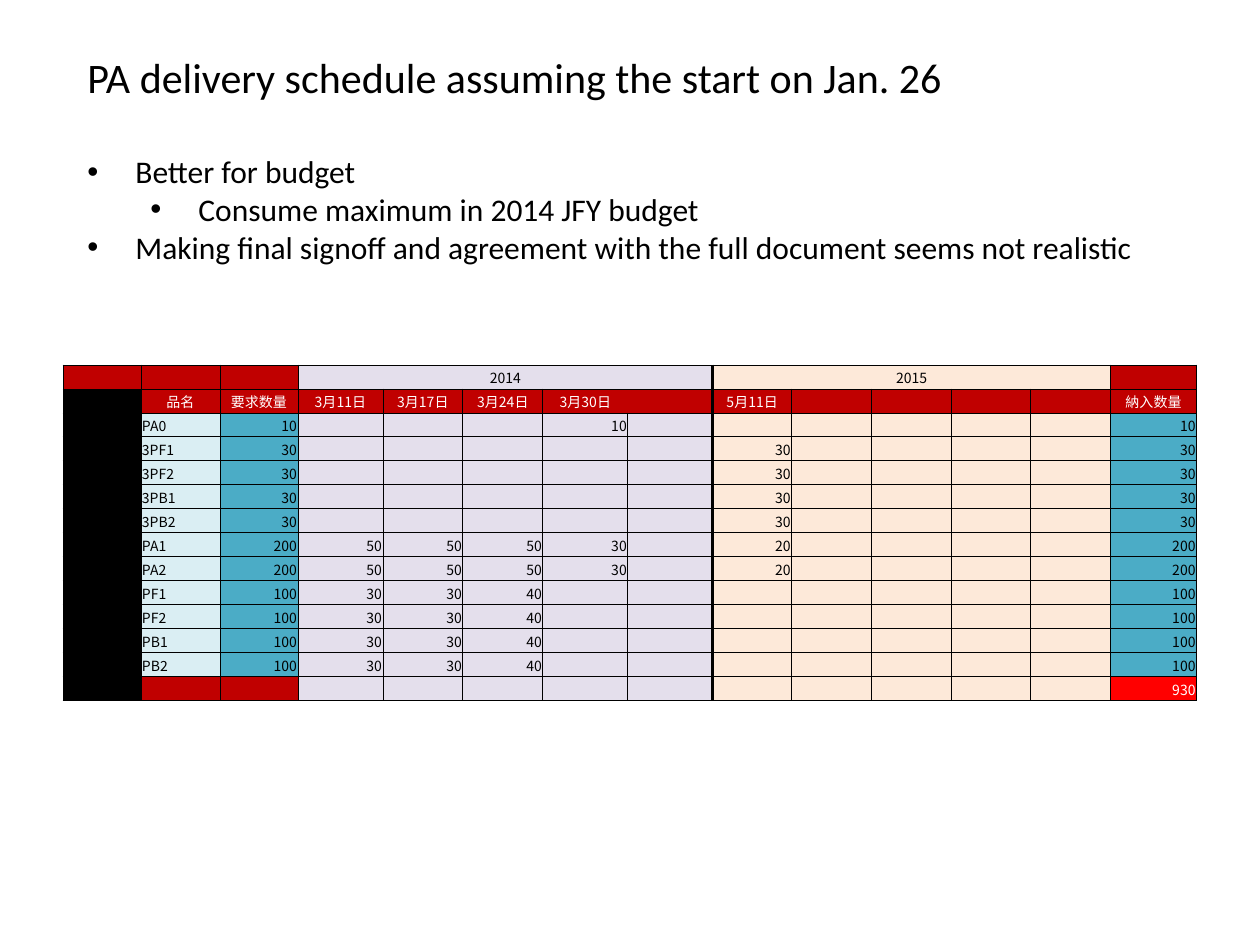
from dataclasses import dataclass

from lxml import etree
from pptx import Presentation
from pptx import util as u
from pptx.dml.color import RGBColor
from pptx.enum import text
from pptx.oxml import ns

PX = u.Inches(1) // 126


@dataclass(frozen=True)
class Theme:
    body_font: str = "Calibri"
    table_font: str = "Noto Sans CJK JP"
    title_size: int = 24
    bullet_size: int = 18
    cell_size: int = 8
    black: str = "000000"
    white: str = "FFFFFF"
    header: str = "C00000"
    name: str = "DAEEF3"
    quantity: str = "4BACC6"
    year_2014: str = "E4DFEC"
    year_2015: str = "FDE9D9"
    total: str = "FF0000"
    thin: float = 0.5
    thick: float = 2


THEME = Theme()

# Delivery table: column positions and content
COL_WIDTHS = [78, 79, 78, 85, 80, 80, 85, 85, 79, 80, 80, 79, 80, 86]
ROW_HEIGHT = 24
NAME, REQUIRED, FIRST_2014, LAST_2014, FIRST_2015, LAST_2015, DELIVERED = 1, 2, 3, 7, 8, 12, 13
HEADINGS = {1: "品名", 2: "要求数量", 3: "3月11日", 4: "3月17日", 5: "3月24日",
            6: "3月30日", 8: "5月11日", 13: "納入数量"}

LATE = {8: 30}
SPLIT = {3: 50, 4: 50, 5: 50, 6: 30, 8: 20}
EARLY = {3: 30, 4: 30, 5: 40}
DELIVERIES = {"PA0": {6: 10}}
DELIVERIES.update(dict.fromkeys(["3PF1", "3PF2", "3PB1", "3PB2"], LATE))
DELIVERIES.update(dict.fromkeys(["PA1", "PA2"], SPLIT))
DELIVERIES.update(dict.fromkeys(["PF1", "PF2", "PB1", "PB2"], EARLY))


def schedule_rows():
    rows = [{FIRST_2014: "2014", FIRST_2015: "2015"}, HEADINGS]
    grand_total = 0
    for part, amounts in DELIVERIES.items():
        quantity = sum(amounts.values())
        grand_total += quantity
        rows.append({NAME: part, REQUIRED: quantity, **amounts, DELIVERED: quantity})
    return rows + [{DELIVERED: grand_total}]


def cell_fill(row, col, last_row):
    if col == 0 and row > 0:
        return THEME.black
    if row == 1:
        return THEME.header
    if FIRST_2014 <= col <= LAST_2014:
        return THEME.year_2014
    if FIRST_2015 <= col <= LAST_2015:
        return THEME.year_2015
    if row == last_row and col == DELIVERED:
        return THEME.total
    if row in (0, last_row):
        return THEME.header
    return THEME.name if col == NAME else THEME.quantity


def cell_alignment(row, col):
    if row < 2:
        return text.PP_ALIGN.CENTER
    return text.PP_ALIGN.LEFT if col == NAME else text.PP_ALIGN.RIGHT


def cell_edges(row, col, spanned):
    """Line width for each drawn side; the year boundary is thick."""
    edges = {"T": THEME.thin, "B": THEME.thin}
    if not spanned and (row, col) != (1, LAST_2014):
        edges["L"] = THEME.thick if col == FIRST_2015 else THEME.thin
    if not spanned and (row, col) != (1, LAST_2014 - 1):
        before_boundary = col == LAST_2014 or (row, col) == (0, FIRST_2014)
        edges["R"] = THEME.thick if before_boundary else THEME.thin
    return edges


class SlideBuilder:
    def __init__(self, slide, theme):
        self.slide = slide
        self.theme = theme

    def run(self, paragraph, words, size, font, color):
        run = paragraph.add_run()
        run.text = words
        run.font.size = u.Pt(size)
        run.font.name = font
        run.font.color.rgb = RGBColor.from_string(color)
        etree.SubElement(run.font._element, ns.qn("a:ea"), typeface=font)

    def bullet(self, paragraph, level):
        paragraph.level = level
        props = paragraph._p.get_or_add_pPr()
        props.set("marL", str((48 + 63 * level) * PX))
        props.set("indent", str(-48 * PX))
        etree.SubElement(props, ns.qn("a:buFont"), typeface="Arial")
        etree.SubElement(props, ns.qn("a:buChar"), char="•")

    def text_block(self, left, top, width, height, title, bullets):
        theme = self.theme
        box = self.slide.shapes.add_textbox(left * PX, top * PX, width * PX, height * PX)
        frame = box.text_frame
        frame.word_wrap = True
        self.run(frame.paragraphs[0], title, theme.title_size, theme.body_font, theme.black)
        for index, (level, words) in enumerate(bullets):
            paragraph = frame.add_paragraph()
            if index == 0:
                paragraph.space_before = u.Pt(29)
            self.bullet(paragraph, level)
            self.run(paragraph, words, theme.bullet_size, theme.body_font, theme.black)

    def borders(self, cell, edges):
        props = cell._tc.get_or_add_tcPr()
        for side in "LRTB":
            if side in edges:
                line = etree.SubElement(props, ns.qn(f"a:ln{side}"), w=str(u.Pt(edges[side])))
                fill = etree.SubElement(line, ns.qn("a:solidFill"))
                etree.SubElement(fill, ns.qn("a:srgbClr"), val=self.theme.black)
            else:
                line = etree.SubElement(props, ns.qn(f"a:ln{side}"))
                etree.SubElement(line, ns.qn("a:noFill"))

    def cell(self, cell, value, fill, color, alignment, edges):
        theme = self.theme
        self.borders(cell, edges)
        cell.fill.solid()
        cell.fill.fore_color.rgb = RGBColor.from_string(fill)
        cell.margin_left = cell.margin_right = cell.margin_top = PX
        cell.margin_bottom = 0
        cell.vertical_anchor = text.MSO_ANCHOR.MIDDLE
        paragraph = cell.text_frame.paragraphs[0]
        paragraph.alignment = alignment
        if value is None:
            # Small type keeps an empty row at its set height
            etree.SubElement(paragraph._p, ns.qn("a:endParaRPr"), sz=str(theme.cell_size * 100))
        else:
            self.run(paragraph, str(value), theme.cell_size, theme.table_font, color)

    def schedule(self, left, top, rows):
        theme = self.theme
        table = self.slide.shapes.add_table(
            len(rows), len(COL_WIDTHS), left * PX, top * PX,
            sum(COL_WIDTHS) * PX, len(rows) * ROW_HEIGHT * PX).table
        table.first_row = table.horz_banding = False
        for column, width in zip(table.columns, COL_WIDTHS):
            column.width = width * PX
        for first, last in ((FIRST_2014, LAST_2014), (FIRST_2015, LAST_2015)):
            table.cell(0, first).merge(table.cell(0, last))
        for r, values in enumerate(rows):
            table.rows[r].height = ROW_HEIGHT * PX
            for c in range(len(COL_WIDTHS)):
                cell = table.cell(r, c)
                fill = cell_fill(r, c, len(rows) - 1)
                color = theme.white if fill in (theme.header, theme.total) else theme.black
                self.cell(cell, values.get(c), fill, color, cell_alignment(r, c),
                          cell_edges(r, c, cell.is_spanned))


def main():
    deck = Presentation()
    deck.slide_width, deck.slide_height = u.Inches(10), u.Inches(7.5)
    builder = SlideBuilder(deck.slides.add_slide(deck.slide_layouts[6]), THEME)

    # Delivery schedule
    builder.schedule(63, 365, schedule_rows())

    # Title and remarks
    builder.text_block(
        75, 45, 1141, 229, "PA delivery schedule assuming the start on Jan. 26",
        [(0, "Better for budget"),
         (1, "Consume maximum in 2014 JFY budget"),
         (0, "Making final signoff and agreement with the full document seems not realistic")])

    deck.save("out.pptx")


if __name__ == "__main__":
    main()
